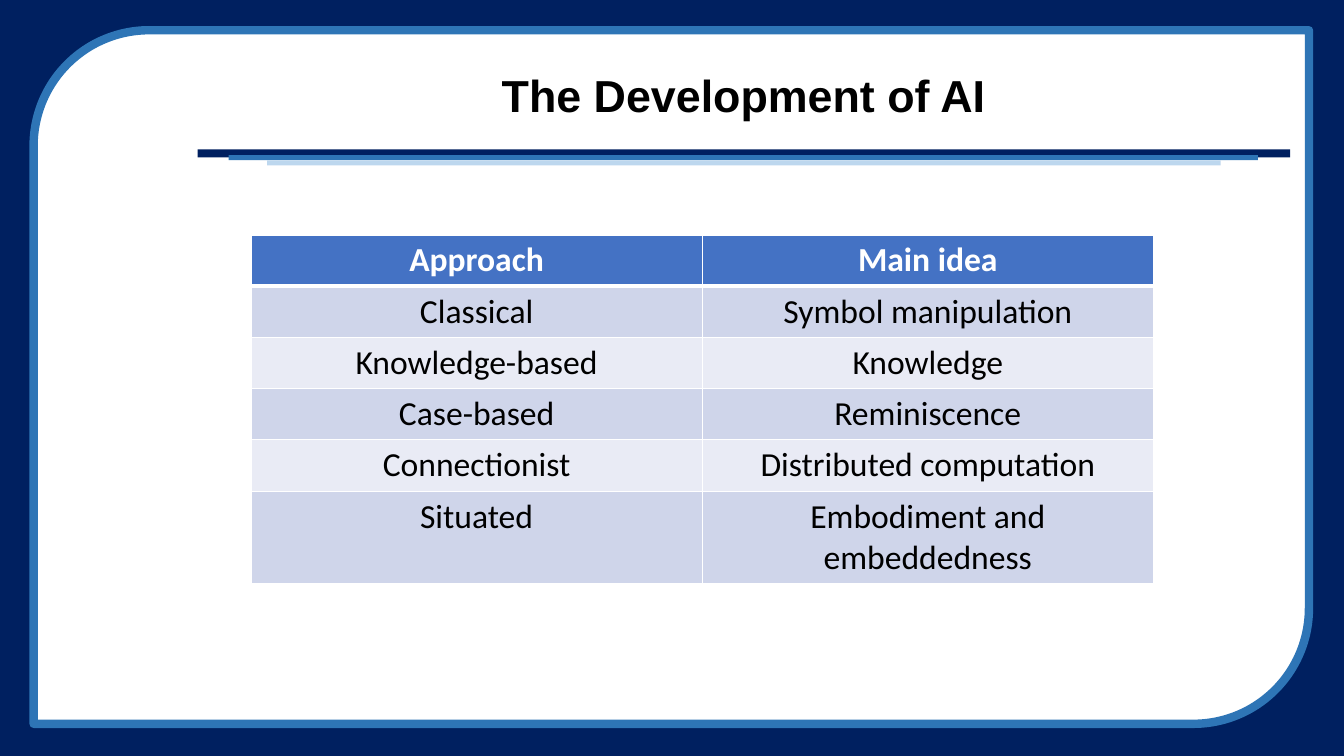
"""Builds the slide on the development of AI, with its frame, title and table."""
from lxml import etree
from pptx import Presentation
from pptx.dml.color import RGBColor
from pptx.enum import shapes, text
from pptx.oxml import ns
from pptx.util import Pt

COLORS = {
    "navy": "002060", "blue": "2E75B6", "pale": "BDD7EE", "white": "FFFFFF",
    "black": "000000", "header": "4472C4", "odd": "CFD5EA", "even": "E9EBF5",
}
ROWS = [
    ("Approach", "Main idea"),
    ("Classical", "Symbol manipulation"),
    ("Knowledge-based", "Knowledge"),
    ("Case-based", "Reminiscence"),
    ("Connectionist", "Distributed computation"),
    ("Situated", "Embodiment and embeddedness"),
]
RULES = [
    ("navy", 141.1, 106.6, 780.5, 5.8),
    ("blue", 163.4, 110.9, 735.1, 3.6),
    ("pale", 190.8, 114.5, 681.1, 3.6),
]


def color(name):
    """Return the named colour."""
    return RGBColor.from_string(COLORS[name])


def add_panel(page, kind, fill, left, top, width, height, line=None):
    """Add a filled shape, with a 6 pt outline if a line colour is given."""
    panel = page.shapes.add_shape(kind, Pt(left), Pt(top), Pt(width), Pt(height))
    panel.shadow.inherit = False
    panel.fill.solid()
    panel.fill.fore_color.rgb = color(fill)
    if line:
        panel.line.color.rgb = color(line)
        panel.line.width = Pt(6)
    else:
        panel.line.fill.background()


def style_text(para, font, size, fill, bold):
    """Centre a paragraph and set its font."""
    para.alignment = text.PP_ALIGN.CENTER
    para.font.name = font
    para.font.size = Pt(size)
    para.font.bold = bold
    para.font.color.rgb = color(fill)


def add_title(page, title):
    """Add the slide title above the rules."""
    box = page.shapes.add_textbox(Pt(141.1), Pt(35.3), Pt(780.5), Pt(69.8))
    frame = box.text_frame
    frame.word_wrap = True
    frame.vertical_anchor = text.MSO_ANCHOR.MIDDLE
    para = frame.paragraphs[0]
    para.text = title
    para.line_spacing = 0.9
    style_text(para, "Arial", 32, "black", True)


def set_borders(cell, bottom):
    """Draw white borders around a cell, with the given bottom width."""
    properties = cell._tc.get_or_add_tcPr()
    widths = {"lnL": 1, "lnR": 1, "lnT": 1, "lnB": bottom}
    for place, (side, width) in enumerate(widths.items()):
        border = etree.Element(ns.qn(f"a:{side}"), w=str(Pt(width)))
        fill = etree.SubElement(border, ns.qn("a:solidFill"))
        etree.SubElement(fill, ns.qn("a:srgbClr"), val=COLORS["white"])
        properties.insert(place, border)


def add_approaches(page):
    """Add the table of approaches and their main ideas."""
    heights = [36.6] * (len(ROWS) - 1) + [65.8]
    frame = page.shapes.add_table(
        len(ROWS), 2, Pt(179.3), Pt(167.8), Pt(644.6), Pt(sum(heights)))
    table = frame.table
    for index, (words, height) in enumerate(zip(ROWS, heights)):
        table.rows[index].height = Pt(height)
        header = index == 0
        fill = "header" if header else ("even", "odd")[index % 2]
        for cell, word in zip(table.rows[index].cells, words):
            cell.text = word
            cell.fill.solid()
            cell.fill.fore_color.rgb = color(fill)
            set_borders(cell, 3 if header else 1)
            style_text(cell.text_frame.paragraphs[0], "Calibri", 24,
                       "white" if header else "black", header)


def main():
    """Build and save the deck."""
    deck = Presentation()
    deck.slide_width, deck.slide_height = Pt(960), Pt(540)
    page = deck.slides.add_slide(deck.slide_layouts[6])
    kinds = shapes.MSO_SHAPE
    add_panel(page, kinds.RECTANGLE, "navy", 0, 0, 960, 540)
    add_panel(page, kinds.ROUND_2_DIAG_RECTANGLE, "white",
              24, 21.6, 911, 495.4, line="blue")
    for rule in RULES:
        add_panel(page, kinds.RECTANGLE, *rule)
    add_title(page, "The Development of AI")
    add_approaches(page)
    deck.save("out.pptx")


if __name__ == "__main__":
    main()
